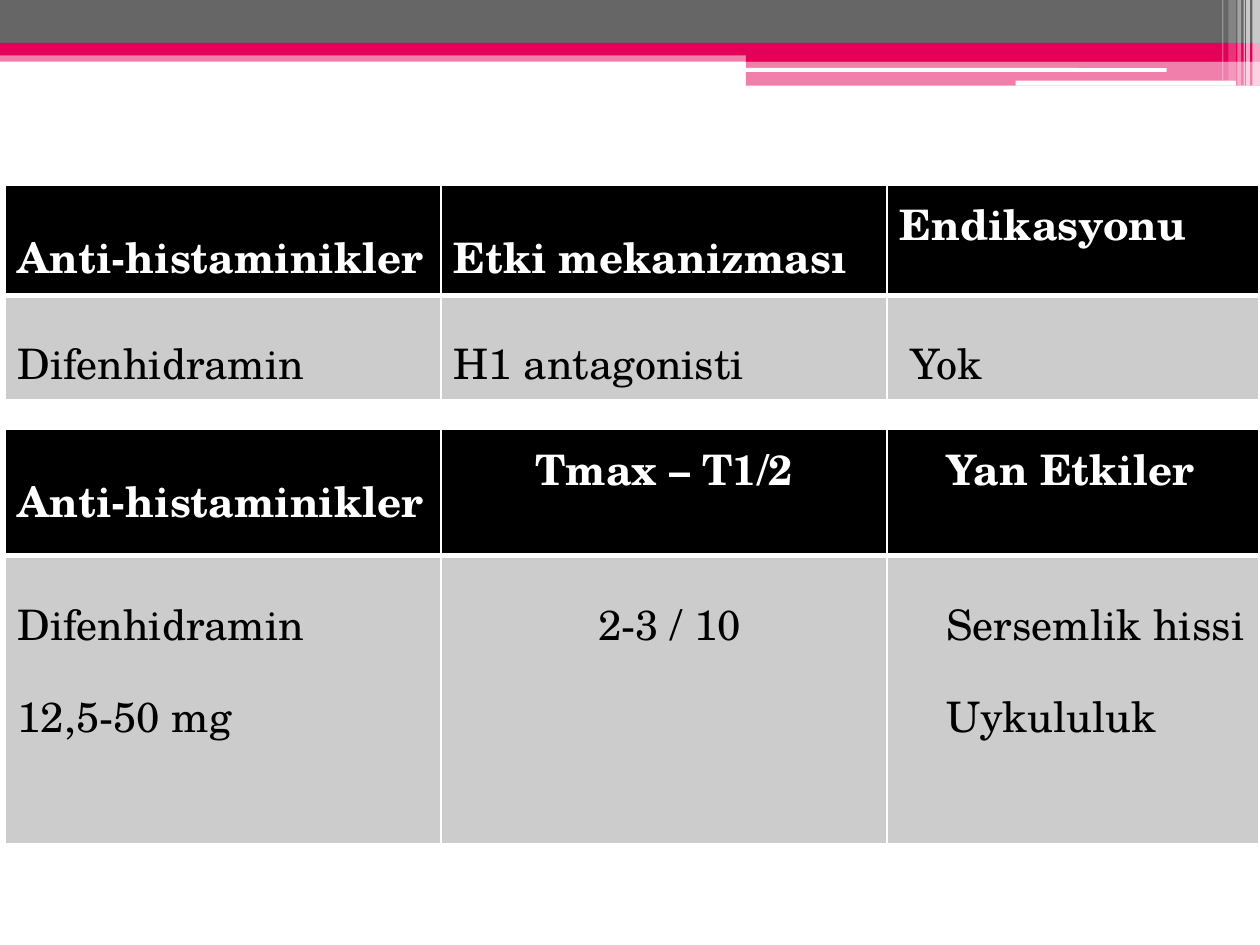
from lxml import etree
from pptx import Presentation
from pptx.dml.color import RGBColor
from pptx.enum import shapes, text
from pptx.oxml.ns import qn
from pptx.util import Inches, Pt

COLORS = {"pink": "E40059", "gray": "666666", "white": "FFFFFF",
          "black": "000000", "silver": "CCCCCC"}
FONT, SIZE = "TeX Gyre Schola", 24
LEFT, CENTER = text.PP_ALIGN.LEFT, text.PP_ALIGN.CENTER
RECT = shapes.MSO_SHAPE.RECTANGLE
ROUND = shapes.MSO_SHAPE.ROUNDED_RECTANGLE

# shape, left, top, width, height, colour, opacity in percent
BANNER = [
    (RECT, 0, 0.4, 10, 0.09, "pink", 50),
    (RECT, 0, 0, 10, 0.34, "gray", 100),
    (RECT, 0, 0.34, 10, 0.1, "pink", 100),
    (RECT, 5.92, 0.39, 4.08, 0.1, "pink", 100),
    (RECT, 5.92, 0.48, 4.08, 0.2, "pink", 50),
    (ROUND, 5.91, 0.54, 3.35, 0.03, "white", 100),
    (ROUND, 8.06, 0.64, 1.75, 0.04, "white", 100),
]
# left, width, height, opacity in percent
STRIPES = [(9.94, 0.06, 0.68, 65), (9.89, 0.03, 0.68, 65), (9.87, 0.01, 0.68, 60),
           (9.82, 0.03, 0.68, 40), (9.75, 0.06, 0.64, 20), (9.7, 0.01, 0.64, 30)]

TABLE_LEFT = 0.04
COLUMNS = [3.46, 3.54, 2.95]
# Each cell: lines, alignment, line spacing, left margin
TABLES = [
    {"top": 1.47, "rows": [0.87, 0.83], "cells": [
        [(["Anti-histaminikler"], LEFT, 1.5, 0.1),
         (["Etki mekanizması"], LEFT, 1.5, 0.1),
         (["Endikasyonu"], LEFT, 1, 0.1)],
        [(["Difenhidramin"], LEFT, 1.5, 0.1),
         (["H1 antagonisti"], LEFT, 1.5, 0.1),
         (["Yok"], LEFT, 1.5, 0.19)]]},
    {"top": 3.41, "rows": [1, 2.29], "cells": [
        [(["Anti-histaminikler"], LEFT, 1.5, 0.1),
         (["Tmax – T1/2"], CENTER, 1, 0.1),
         (["Yan Etkiler"], LEFT, 1, 0.47)],
        [(["Difenhidramin", "12,5-50 mg"], LEFT, 1.5, 0.1),
         (["2-3 / 10"], CENTER, 1.5, 0.19),
         (["Sersemlik hissi", "Uykululuk"], LEFT, 1.5, 0.47)]]},
]


def rgb(name):
    return RGBColor.from_string(COLORS[name])


def add_bar(page, kind, left, top, width, height, color, opacity):
    bar = page.shapes.add_shape(kind, Inches(left), Inches(top),
                                Inches(width), Inches(height))
    bar.shadow.inherit = False
    bar.line.fill.background()
    bar.fill.solid()
    bar.fill.fore_color.rgb = rgb(color)
    if opacity < 100:
        fill_color = bar._element.spPr.find(".//" + qn("a:srgbClr"))
        etree.SubElement(fill_color, qn("a:alpha"), val=str(opacity * 1000))


def add_borders(cell, widths):
    """Draw white cell edges; widths maps L, R, T, B to points."""
    properties = cell._tc.get_or_add_tcPr()
    for side, width in widths.items():
        edge = etree.SubElement(properties, qn("a:ln" + side), w=str(Pt(width)))
        fill = etree.SubElement(edge, qn("a:solidFill"))
        etree.SubElement(fill, qn("a:srgbClr"), val=COLORS["white"])


def fill_cell(cell, content, is_header):
    lines, alignment, spacing, margin = content
    edge = {"T": 1, "B": 3} if is_header else {"T": 3, "B": 1}
    add_borders(cell, {"L": 1, "R": 1, **edge})
    cell.fill.solid()
    cell.fill.fore_color.rgb = rgb("black" if is_header else "silver")
    cell.margin_left = Inches(margin)
    cell.text_frame.text = "\n".join(lines)
    for para in cell.text_frame.paragraphs:
        para.alignment = alignment
        para.line_spacing = float(spacing)
        for span in para.runs:
            span.font.name = FONT
            span.font.size = Pt(SIZE)
            span.font.bold = is_header
            span.font.color.rgb = rgb("white" if is_header else "black")


def add_drug_table(page, top, rows, cells):
    table = page.shapes.add_table(
        len(rows), len(COLUMNS), Inches(TABLE_LEFT), Inches(top),
        Inches(sum(COLUMNS)), Inches(sum(rows))).table
    for column, width in zip(table.columns, COLUMNS):
        column.width = Inches(width)
    for r, height in enumerate(rows):
        table.rows[r].height = Inches(height)
        for c, content in enumerate(cells[r]):
            fill_cell(table.cell(r, c), content, is_header=r == 0)


def main():
    deck = Presentation()
    deck.slide_width, deck.slide_height = Inches(10), Inches(7.5)
    page = deck.slides.add_slide(deck.slide_layouts[6])
    for bar in BANNER:
        add_bar(page, *bar)
    for left, width, height, opacity in STRIPES:
        add_bar(page, RECT, left, 0, width, height, "white", opacity)
    for drug_table in TABLES:
        add_drug_table(page, **drug_table)
    deck.save("out.pptx")


if __name__ == "__main__":
    main()
